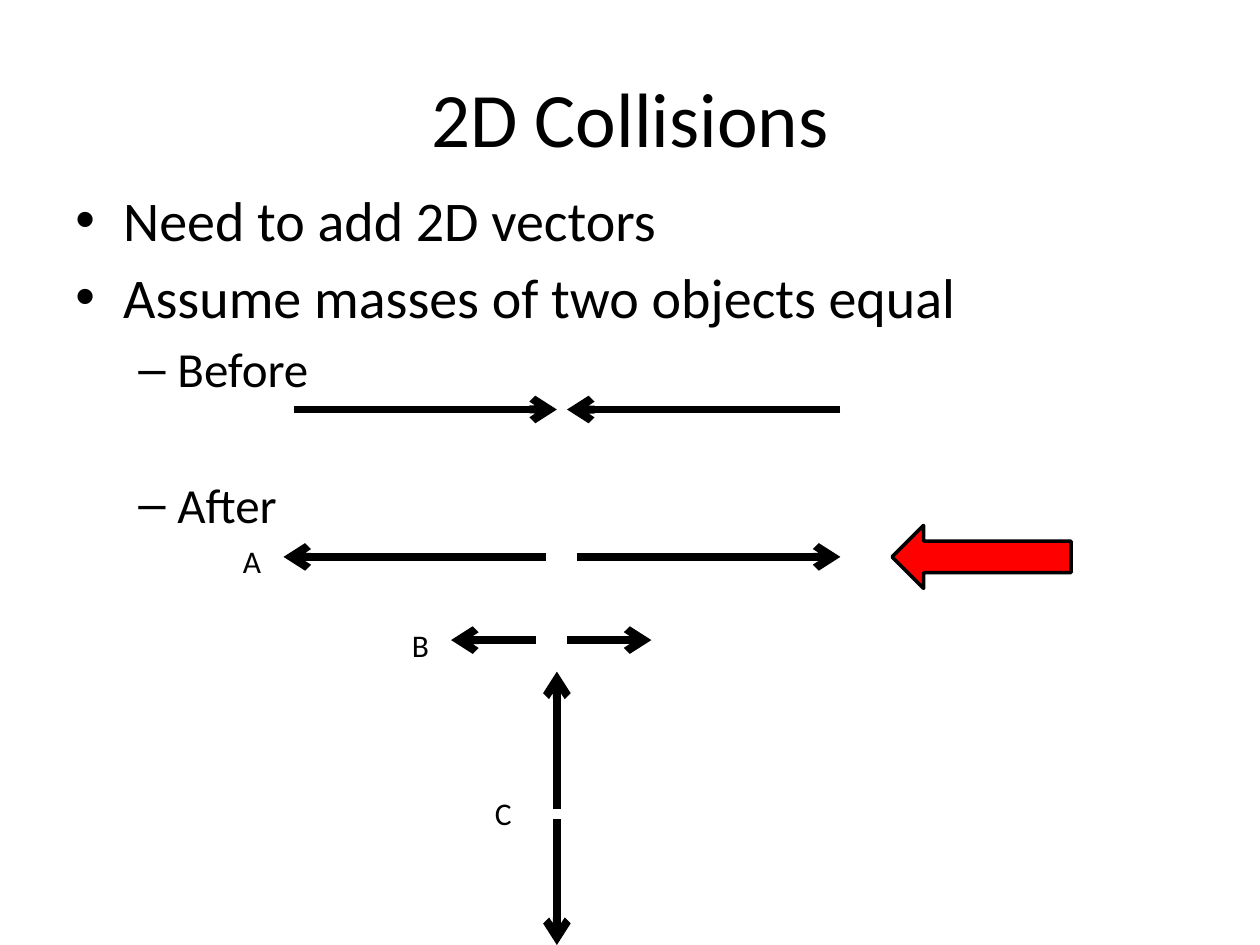
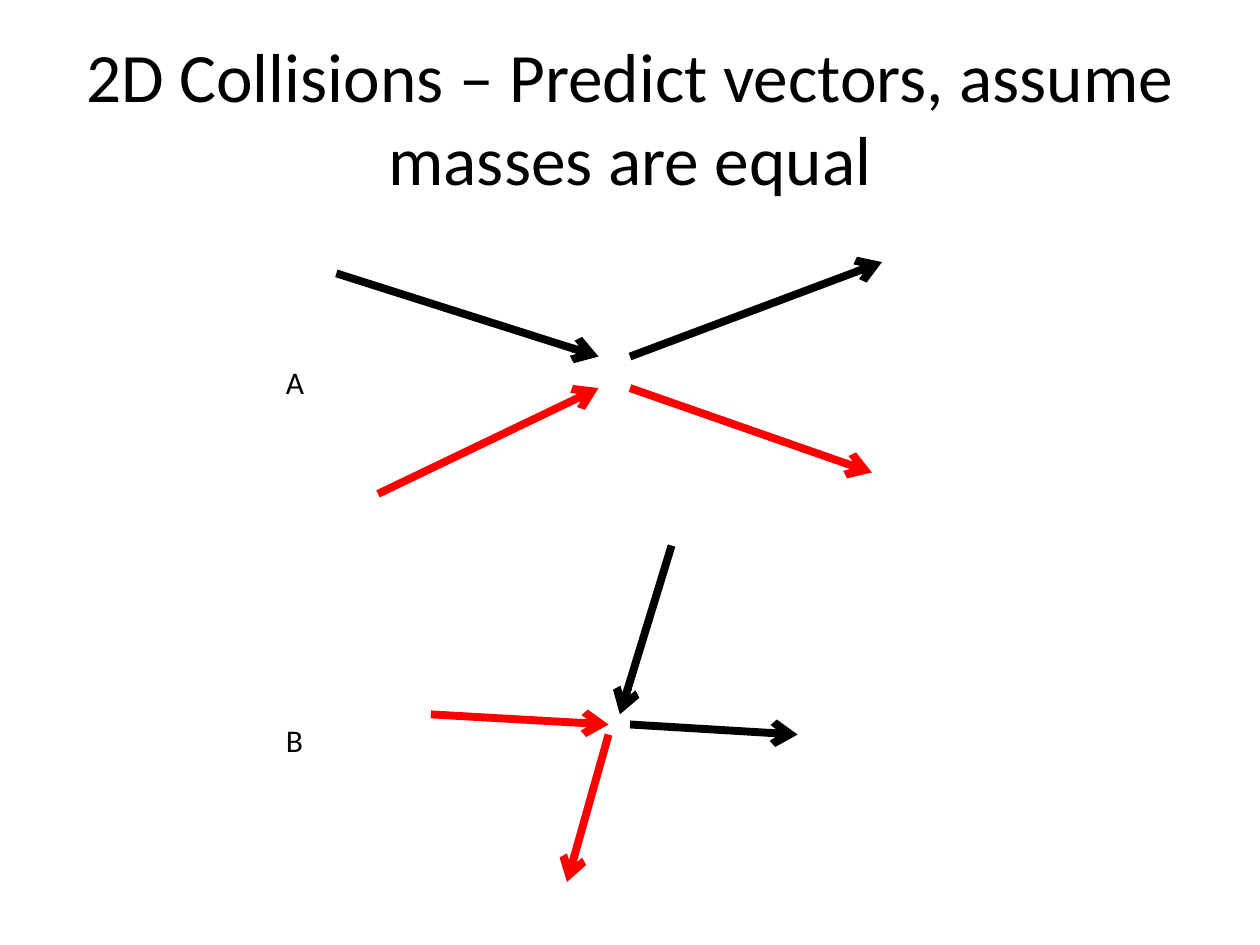
import pptx
import pptx.util
import pptx.dml.color
import pptx.enum.shapes
import pptx.enum.text
import pptx.oxml.ns
import lxml.etree

Inches = pptx.util.Inches
Pt = pptx.util.Pt
RGBColor = pptx.dml.color.RGBColor

BLACK = RGBColor(0, 0, 0)
RED = RGBColor(255, 0, 0)
FONT = "Calibri"

# Text, level, space before in points
BULLETS = [
    ("Need to add 2D vectors", 0, 0),
    ("Assume masses of two objects equal", 0, 6),
    ("Before", 1, 5),
    ("After", 1, 44),
]
# Bullet sign, size, left margin, hanging indent
LEVELS = [("•", 32, 0.38, 0.38), ("–", 28, 0.81, 0.31)]

# Each vector: start, end, colour. Each label: letter, left, top
SLIDES = [
    {
        "title": ("2D Collisions", 44),
        "bullets": BULLETS,
        "vectors": [
            ((2.33, 3.25), (4.42, 3.25), BLACK),
            ((6.67, 3.25), (4.5, 3.25), BLACK),
            ((4.33, 4.42), (2.25, 4.42), BLACK),
            ((4.58, 4.42), (6.67, 4.42), BLACK),
            ((4.42, 6.42), (4.42, 5.33), BLACK),
            ((4.42, 6.5), (4.42, 7.5), BLACK),
            ((4.25, 5.08), (3.58, 5.08), BLACK),
            ((4.5, 5.08), (5.17, 5.08), BLACK),
        ],
        "labels": [("A", 1.83, 4.25), ("B", 3.17, 4.92), ("C", 3.83, 6.25)],
        "pointer": (7.08, 4.17, 1.42, 0.5),
    },
    {
        "title": ("2D Collisions – Predict vectors, assume masses are equal", 39.6),
        "vectors": [
            ((2.67, 2.17), (4.75, 2.83), BLACK),
            ((3, 3.92), (4.75, 3.08), RED),
            ((5, 3.08), (6.92, 3.75), RED),
            ((5, 2.83), (7, 2.08), BLACK),
            ((5.33, 4.33), (4.92, 5.67), BLACK),
            ((3.42, 5.67), (4.83, 5.75), RED),
            ((4.83, 5.83), (4.5, 7), RED),
            ((5, 5.75), (6.33, 5.83), BLACK),
        ],
        "labels": [("A", 2.17, 2.83), ("B", 2.17, 5.67)],
    },
]


def add_tag(parent, tag, **attrs):
    return lxml.etree.SubElement(parent, pptx.oxml.ns.qn(tag), **attrs)


def add_box(slide, left, top, width, height, wrap=True):
    box = slide.shapes.add_textbox(*map(Inches, (left, top, width, height)))
    box.text_frame.word_wrap = wrap
    return box.text_frame


def style(par, size):
    for run in par.runs:
        run.font.name = FONT
        run.font.size = Pt(size)
        run.font.color.rgb = BLACK


def add_title(slide, text, size):
    frame = add_box(slide, 0.5, 0.3, 9, 1.25)
    frame.vertical_anchor = pptx.enum.text.MSO_ANCHOR.MIDDLE
    frame.text = text
    par = frame.paragraphs[0]
    par.alignment = pptx.enum.text.PP_ALIGN.CENTER
    style(par, size)


def add_bullets(slide, items):
    frame = add_box(slide, 0.5, 1.42, 9, 4.95)
    frame.text = "\n".join(text for text, _, _ in items)
    for par, (_, level, space) in zip(frame.paragraphs, items):
        sign, size, margin, hang = LEVELS[level]
        par.level = level
        par.space_before = Pt(space)
        style(par, size)
        props = par._p.get_or_add_pPr()
        props.set("marL", str(Inches(margin)))
        props.set("indent", str(-Inches(hang)))
        add_tag(props, "a:buFont", typeface="Arial")
        add_tag(props, "a:buChar", char=sign)


def add_vector(slide, start, end, color):
    line = slide.shapes.add_connector(
        pptx.enum.shapes.MSO_CONNECTOR.STRAIGHT, *map(Inches, start + end))
    line.line.color.rgb = color
    line.line.width = Pt(4.5)
    add_tag(line.line._get_or_add_ln(), "a:tailEnd", type="arrow")
    add_tag(line._element.spPr, "a:effectLst")


def add_label(slide, text, left, top):
    frame = add_box(slide, left, top, 0.35, 0.4, wrap=False)
    frame.auto_size = pptx.enum.text.MSO_AUTO_SIZE.SHAPE_TO_FIT_TEXT
    frame.text = text
    style(frame.paragraphs[0], 18)


def add_pointer(slide, place):
    arrow = slide.shapes.add_shape(
        pptx.enum.shapes.MSO_SHAPE.LEFT_ARROW, *map(Inches, place))
    arrow.shadow.inherit = False
    arrow.fill.solid()
    arrow.fill.fore_color.rgb = RED
    arrow.line.color.rgb = BLACK
    arrow.line.width = Pt(2)


def main():
    deck = pptx.Presentation()
    deck.slide_width, deck.slide_height = Inches(10), Inches(7.5)
    for page in SLIDES:
        slide = deck.slides.add_slide(deck.slide_layouts[6])
        add_title(slide, *page["title"])
        if "bullets" in page:
            add_bullets(slide, page["bullets"])
        for vector in page["vectors"]:
            add_vector(slide, *vector)
        for label in page["labels"]:
            add_label(slide, *label)
        if "pointer" in page:
            add_pointer(slide, page["pointer"])
    deck.save("out.pptx")


if __name__ == "__main__":
    main()
